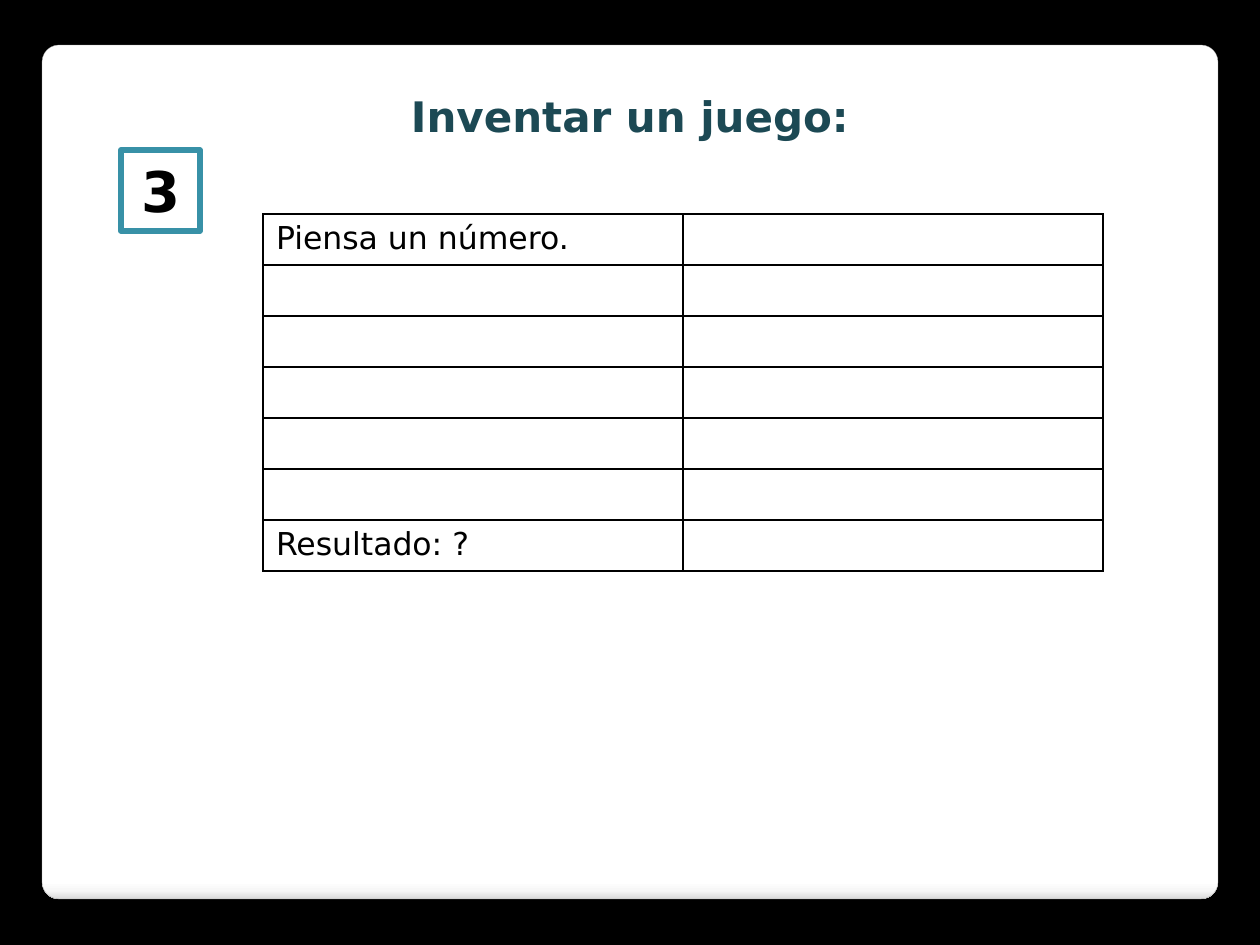
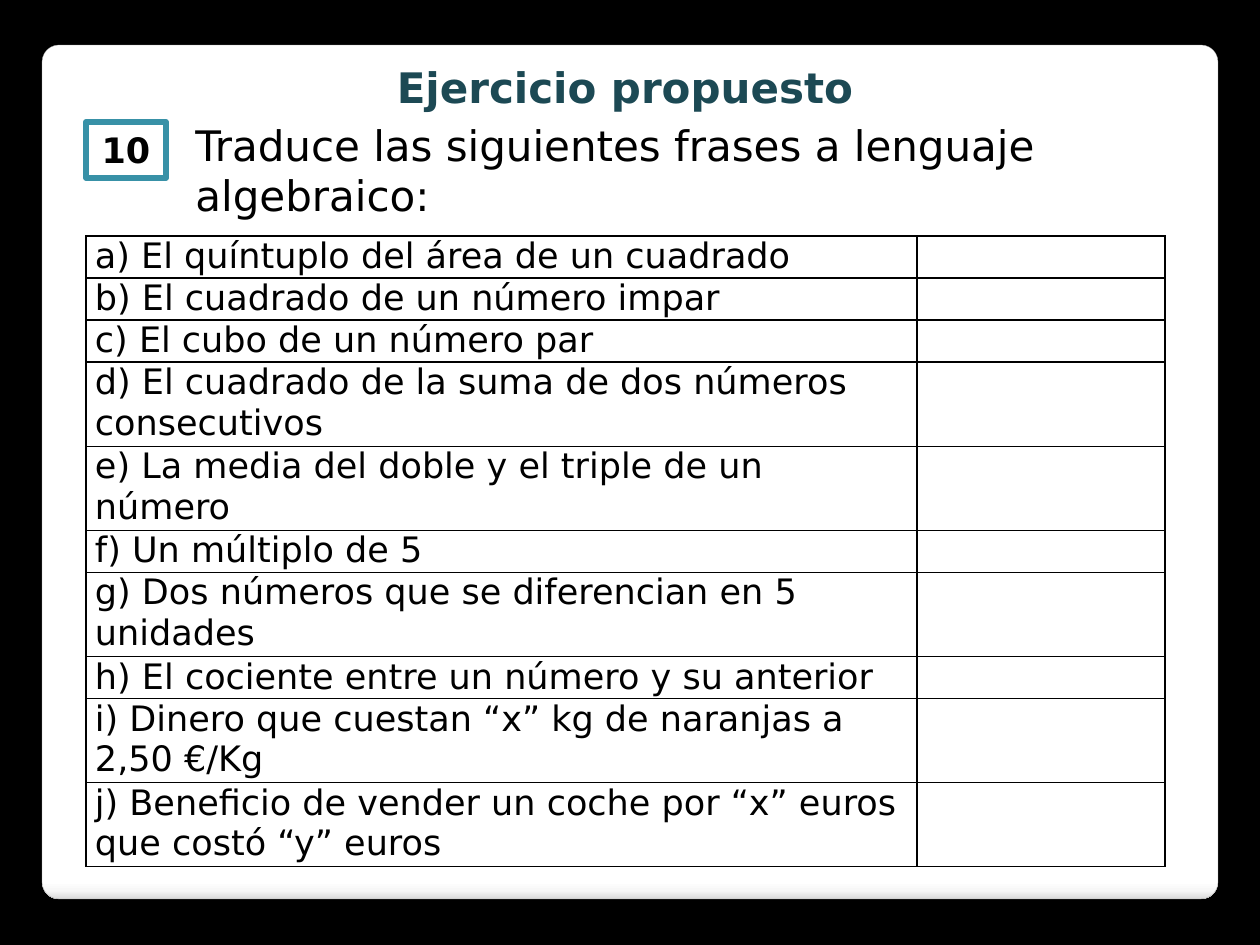
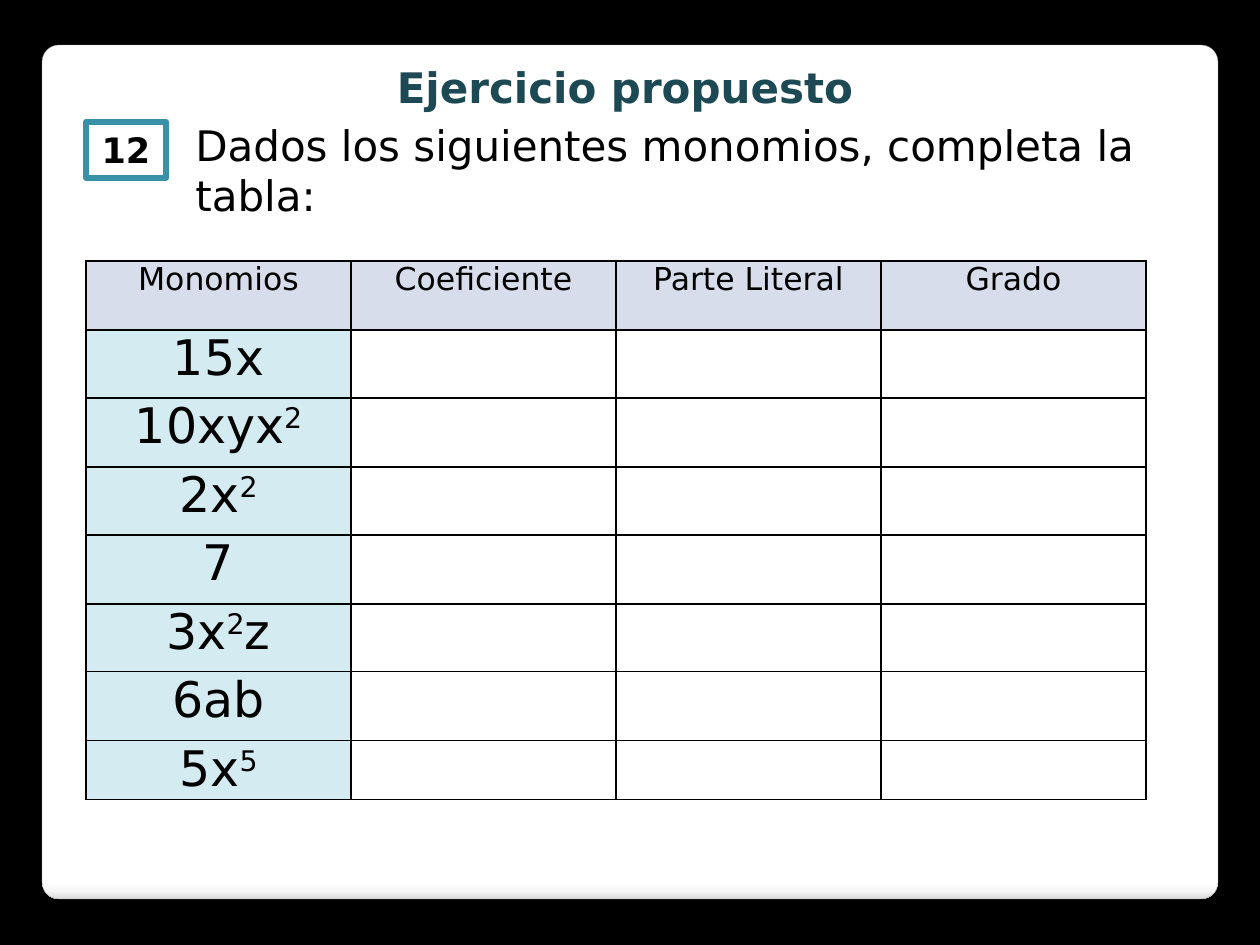
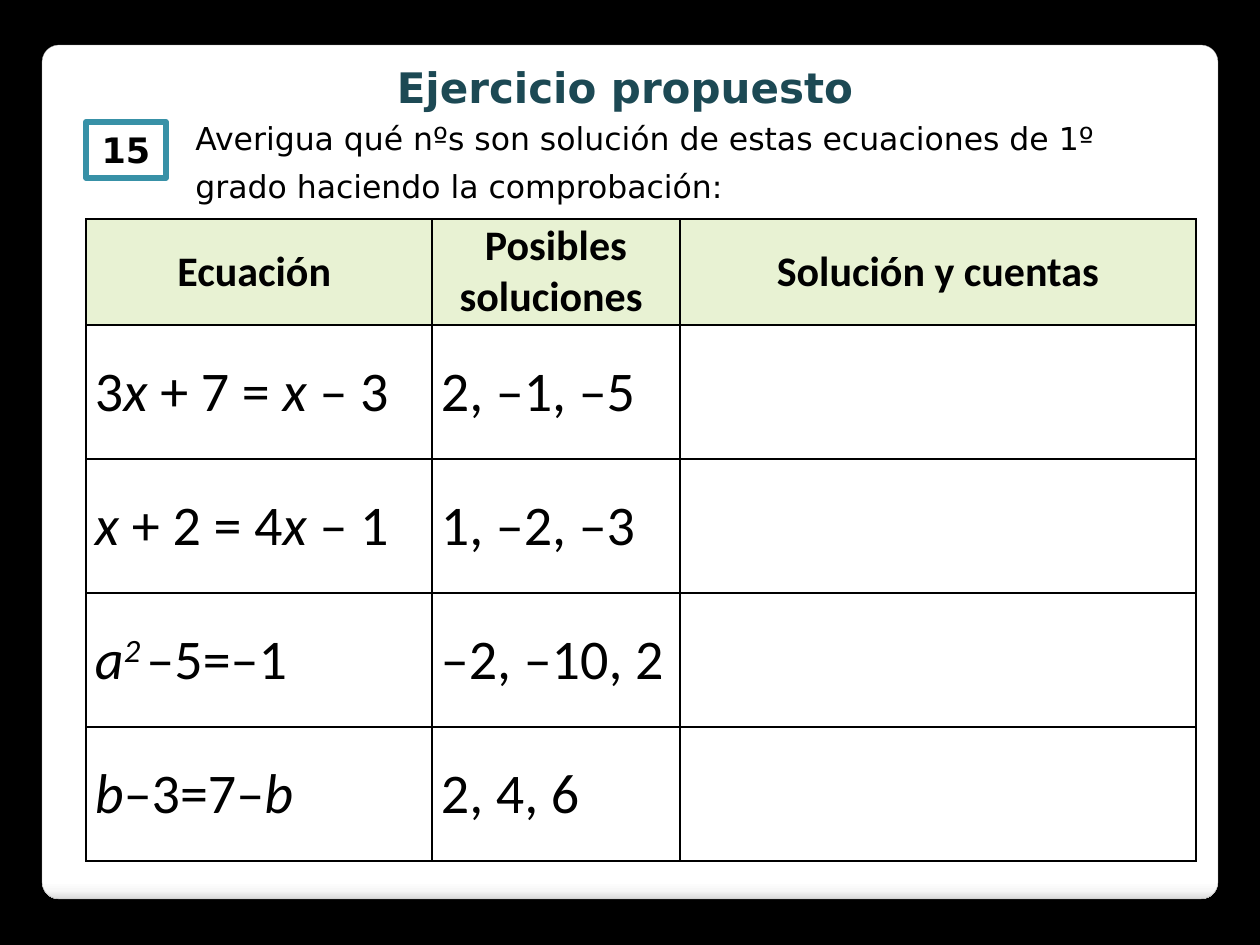
from lxml import etree
from pptx import Presentation
from pptx.dml.color import RGBColor
from pptx.enum.shapes import MSO_SHAPE
from pptx.enum.text import MSO_ANCHOR, MSO_AUTO_SIZE, PP_ALIGN
from pptx.oxml.ns import qn
from pptx.util import Pt

RECTANGLE, ROUNDED = MSO_SHAPE.RECTANGLE, MSO_SHAPE.ROUNDED_RECTANGLE
LEFT, CENTER = PP_ALIGN.LEFT, PP_ALIGN.CENTER
TOP, MIDDLE = MSO_ANCHOR.TOP, MSO_ANCHOR.MIDDLE
GROW = MSO_AUTO_SIZE.SHAPE_TO_FIT_TEXT

EMU_PER_PX = 914400 / 126
SANS, CALIBRI = "DejaVu Sans", "Calibri"
BLACK, WHITE = "000000", "FFFFFF"
TITLE_COLOR, BADGE_COLOR = "1C4954", "3891A7"
PANEL_LINE = "A4A4A4"
PANEL_STOPS = [(0, WHITE), (98, WHITE), (99, "F7F7F7"), (100, "DADADA")]
HEADER_BLUE, MONOMIAL_BLUE, HEADER_GREEN = "D7DDEB", "D4EBF1", "E8F2D3"

PANEL_BOX = (42, 45, 1176, 854)
EXERCISE_BOX = (44, 55, 1162, 63)
ROOMY, TIGHT = (13, 6), (9, 0)  # cell margins: sides, top and bottom

ITALIC = {"italic": True}
POWER = {"power": True}
ITALIC_POWER = {"italic": True, "power": True}

PHRASES = [  # wording and the number of lines it takes
    ("a) El quíntuplo del área de un cuadrado", 1),
    ("b) El cuadrado de un número impar", 1),
    ("c) El cubo de un número par", 1),
    ("d) El cuadrado de la suma de dos números consecutivos", 2),
    ("e) La media del doble y el triple de un número", 2),
    ("f) Un múltiplo de 5", 1),
    ("g) Dos números que se diferencian en 5 unidades", 2),
    ("h) El cociente entre un número y su anterior", 1),
    ("i) Dinero que cuestan “x” kg de naranjas a 2,50 €/Kg", 2),
    ("j) Beneficio de vender un coche por “x” euros que costó “y” euros", 2),
]
MONOMIAL_HEADERS = ["Monomios", "Coeficiente", "Parte Literal", "Grado"]
MONOMIALS = [
    "15x",
    [("10xyx", {}), ("2", POWER)],
    [("2x", {}), ("2", POWER)],
    "7",
    [("3x", {}), ("2", POWER), ("z", {})],
    "6ab",
    [("5x", {}), ("5", POWER)],
]
EQUATION_HEADERS = ["Ecuación ", "Posibles soluciones ", "Solución y cuentas"]
EQUATIONS = [
    ([("3", {}), ("x ", ITALIC), ("+ 7 = ", {}), ("x ", ITALIC), ("– 3", {})],
     "2, –1, –5"),
    ([("x ", ITALIC), ("+ 2 = 4", {}), ("x ", ITALIC), ("– 1", {})],
     "1, –2, –3"),
    ([("a", ITALIC), ("2", ITALIC_POWER), (" ", {"italic": True, "size": 16}),
      ("–5=–1", {})],
     "–2, –10, 2"),
    ([("b", ITALIC), ("–3=7–", {}), ("b", ITALIC)],
     "2, 4, 6"),
]


def px(length):
    return round(length * EMU_PER_PX)


def rgb(color):
    return RGBColor.from_string(color)


def add_xml(parent, tag, **attributes):
    return etree.SubElement(parent, qn(tag), attributes)


# Text
def format_span(span, size, font=SANS, color=BLACK, bold=False, italic=False,
                power=False):
    span.font.size = Pt(size)
    span.font.name = font
    span.font.color.rgb = rgb(color)
    span.font.bold = bold
    span.font.italic = italic
    if power:
        span._r.get_or_add_rPr().set("baseline", "30000")


def write(para, content, align=LEFT, **style):
    """Write plain text, or a list of (text, style changes)."""
    para.alignment = align
    if isinstance(content, str):
        content = [(content, {})]
    for text, changes in content:
        span = para.add_run()
        span.text = text
        format_span(span, **{**style, **changes})


def add_text(page, box, content, **style):
    frame = page.shapes.add_textbox(*map(px, box)).text_frame
    frame.word_wrap = True
    frame.auto_size = GROW
    write(frame.paragraphs[0], content, **style)


# Shared page parts
def add_panel(page, box):
    panel = page.shapes.add_shape(ROUNDED, *map(px, box))
    panel.adjustments[0] = 0.02
    panel.line.color.rgb = rgb(PANEL_LINE)
    panel.line.width = Pt(0.16)
    panel.fill.gradient()
    panel.fill.gradient_angle = 270
    properties = panel._element.spPr
    stops = properties.find(qn("a:gradFill")).find(qn("a:gsLst"))
    for stop in list(stops):
        stops.remove(stop)
    for position, color in PANEL_STOPS:
        stop = add_xml(stops, "a:gs", pos=str(position * 1000))
        add_xml(stop, "a:srgbClr", val=color)
    panel.shadow.inherit = False
    shadow = add_xml(properties.find(qn("a:effectLst")), "a:outerShdw",
                     blurRad=str(Pt(6)), dist=str(Pt(4)), dir="5400000")
    shade = add_xml(shadow, "a:srgbClr", val=BLACK)
    add_xml(shade, "a:alpha", val="25000")


def add_page(deck, title, title_box):
    page = deck.slides.add_slide(deck.slide_layouts[6])
    add_panel(page, PANEL_BOX)
    add_text(page, title_box, title, align=CENTER, size=24, color=TITLE_COLOR,
             bold=True)
    return page


def add_badge(page, box, number, size):
    badge = page.shapes.add_shape(RECTANGLE, *map(px, box))
    badge.shadow.inherit = False
    badge.fill.solid()
    badge.fill.fore_color.rgb = rgb(WHITE)
    badge.line.color.rgb = rgb(BADGE_COLOR)
    badge.line.width = Pt(3.35)
    add_xml(badge._element.spPr.find(qn("a:ln")), "a:round")
    badge.text_frame.auto_size = GROW
    write(badge.text_frame.paragraphs[0], number, align=CENTER, size=size,
          bold=True)


def add_exercise_page(deck, number, instruction, height, size=24):
    page = add_page(deck, "Ejercicio propuesto", EXERCISE_BOX)
    left, top = EXERCISE_BOX[:2]
    add_badge(page, (left + 42, top + 67, 80, 56), number, 20)
    add_text(page, (left + 139, top + 58, 992, height), instruction, size=size)
    return page


# Tables
def add_grid(page, left, top, widths, heights, margins):
    box = (left, top, sum(widths), sum(heights))
    table = page.shapes.add_table(len(heights), len(widths),
                                  *map(px, box)).table
    table.first_row = table.horz_banding = False
    for column, width in zip(table.columns, widths):
        column.width = px(width)
    for row, height in zip(table.rows, heights):
        row.height = px(height)
    side, edge = map(px, margins)
    for cell in table.iter_cells():
        cell.margin_left = cell.margin_right = side
        cell.margin_top = cell.margin_bottom = edge
        add_borders(cell)
        cell.fill.background()
    return table


def add_borders(cell):
    properties = cell._tc.get_or_add_tcPr()
    for tag in ("a:lnL", "a:lnR", "a:lnT", "a:lnB"):
        line = add_xml(properties, tag, w=str(Pt(1)))
        add_xml(add_xml(line, "a:solidFill"), "a:srgbClr", val=BLACK)


def fill_cell(cell, content, fill=None, anchor=TOP, before=0, after=0, **style):
    cell.vertical_anchor = anchor
    if fill:
        cell.fill.solid()
        cell.fill.fore_color.rgb = rgb(fill)
    para = cell.text_frame.paragraphs[0]
    para.space_before, para.space_after = Pt(before), Pt(after)
    write(para, content, **style)


# Pages
def build_game(deck):
    page = add_page(deck, "Inventar un juego:", (49, 84, 1162, 63))
    table = add_grid(page, 263, 214, [420] * 2, [51] * 7, ROOMY)
    fill_cell(table.cell(0, 0), "Piensa un número.", size=18)
    fill_cell(table.cell(6, 0), "Resultado: ?", size=18)
    add_badge(page, (121, 150, 79, 81), "3", 32)


def build_phrases(deck):
    page = add_exercise_page(
        deck, "10", "Traduce las siguientes frases a lenguaje algebraico:", 115)
    heights = [42 * lines for _, lines in PHRASES]
    table = add_grid(page, 86, 236, [831, 248], heights, TIGHT)
    for row, (phrase, _) in enumerate(PHRASES):
        fill_cell(table.cell(row, 0), phrase, before=3, after=3, size=20)


def build_monomials(deck):
    page = add_exercise_page(
        deck, "12", "Dados los siguientes monomios, completa la tabla:", 115)
    heights = [69, 68] * 3 + [69, 59]
    table = add_grid(page, 86, 261, [265] * 4, heights, TIGHT)
    for column, header in enumerate(MONOMIAL_HEADERS):
        fill_cell(table.cell(0, column), header, HEADER_BLUE, after=6,
                  align=CENTER, size=18)
    for row, monomial in enumerate(MONOMIALS, 1):
        fill_cell(table.cell(row, 0), monomial, MONOMIAL_BLUE, after=6,
                  align=CENTER, size=28)


def build_equations(deck):
    instruction = [("Averigua qué nºs son solución de estas ecuaciones de 1º "
                    "grado haciendo la comprobación:", {}), (" ", {"size": 24})]
    page = add_exercise_page(deck, "15", instruction, 102, size=18)
    table = add_grid(page, 86, 219, [346, 248, 516], [106] + [134] * 4, TIGHT)
    for column, header in enumerate(EQUATION_HEADERS):
        fill_cell(table.cell(0, column), header, HEADER_GREEN, MIDDLE,
                  align=CENTER, size=24, font=CALIBRI, bold=True)
    for row, contents in enumerate(EQUATIONS, 1):
        for column, content in enumerate(contents):
            fill_cell(table.cell(row, column), content, anchor=MIDDLE, size=32,
                      font=CALIBRI)


def main():
    deck = Presentation()
    deck.slide_width, deck.slide_height = px(1260), px(945)
    backdrop = deck.slide_master.background.fill
    backdrop.solid()
    backdrop.fore_color.rgb = rgb(BLACK)
    build_game(deck)
    build_phrases(deck)
    build_monomials(deck)
    build_equations(deck)
    deck.save("out.pptx")


if __name__ == "__main__":
    main()
